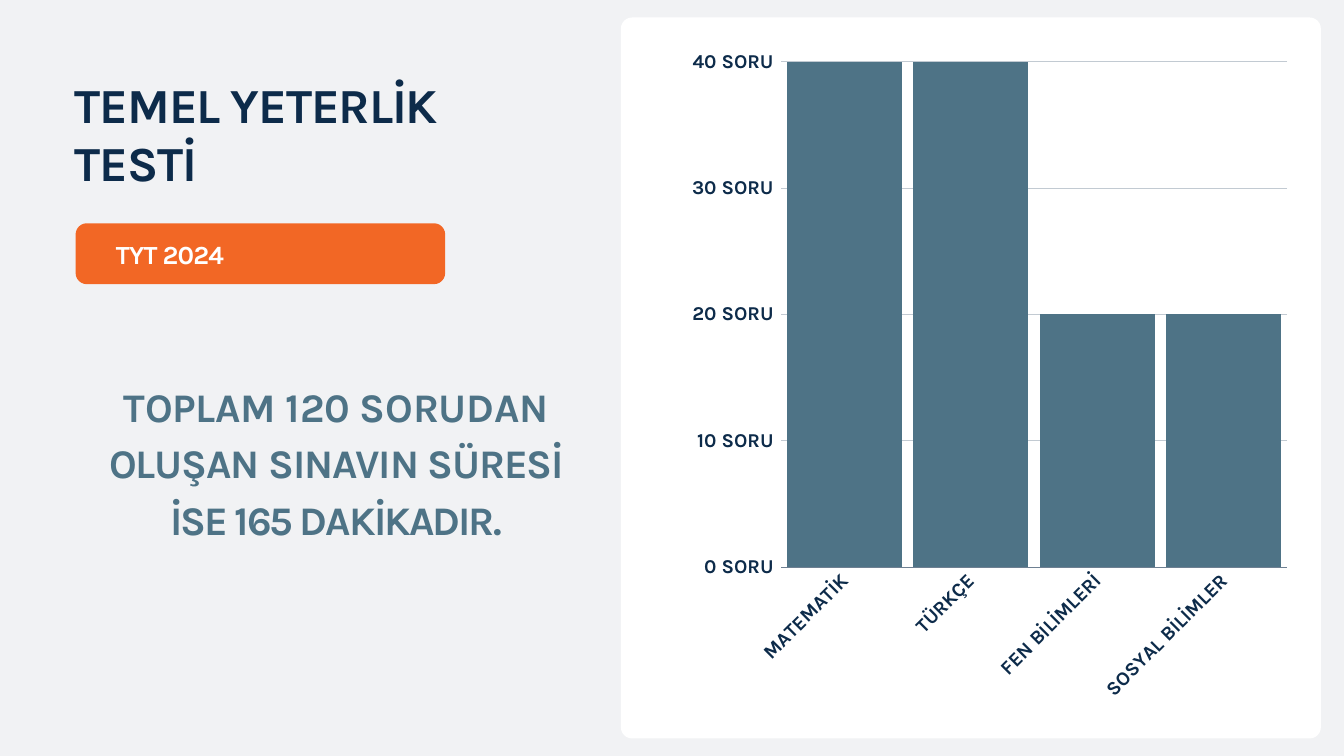
"""Build the TYT 2024 slide with its question-count chart."""
import pptx
import pptx.chart.data
import pptx.dml.color
import pptx.enum.chart
import pptx.enum.shapes
import pptx.enum.text
import pptx.oxml
import pptx.oxml.ns
import pptx.util

PX = 9525
FONT = "Karla"
COLORS = {
    "background": "F1F2F4",
    "panel": "FFFFFF",
    "navy": "0D2B4A",
    "orange": "F26725",
    "teal": "4E7386",
    "grid": "C2CAD2",
    "axis": "6E8092",
}
SUBJECTS = {"MATEMATİK": 40, "TÜRKÇE": 40, "FEN BİLİMLERİ": 20, "SOSYAL BİLİMLER": 20}
CHART = (920, 50, 940, 990)
PLOT = (1116, 88, 723, 722)


def px(*lengths):
    return [pptx.util.Emu(n * PX) for n in lengths]


def rgb(name):
    return pptx.dml.color.RGBColor.from_string(COLORS[name])


def set_font(font, size, color):
    font.name, font.size, font.bold = FONT, pptx.util.Pt(size), True
    font.color.rgb = rgb(color)


def write(s, runs, size, color, align=pptx.enum.text.PP_ALIGN.LEFT, margin=0,
          anchor=pptx.enum.text.MSO_ANCHOR.TOP, line_spacing=1.0):
    """Fill a shape with one paragraph of (text, letter spacing in points) runs."""
    tf = s.text_frame
    tf.word_wrap = True
    tf.auto_size = pptx.enum.text.MSO_AUTO_SIZE.NONE
    tf.vertical_anchor = anchor
    tf.margin_left, tf.margin_top, tf.margin_right, tf.margin_bottom = px(margin, 1, 0, 0)
    p = tf.paragraphs[0]
    p.alignment, p.line_spacing = align, line_spacing
    p.space_before = pptx.util.Pt(1)
    set_font(p.font, size, color)
    for text, spacing in runs:
        r = p.add_run()
        r.text = text
        r.font._element.set("spc", str(round(spacing * 100)))


def add_rounded_box(slide, box, color, radius=16):
    s = slide.shapes.add_shape(pptx.enum.shapes.MSO_SHAPE.ROUNDED_RECTANGLE, *px(*box))
    s.adjustments[0] = radius / min(box[2:])
    s.shadow.inherit = False
    s.fill.solid()
    s.fill.fore_color.rgb = rgb(color)
    s.line.fill.background()
    return s


def set_plot_area(chart, frame, plot):
    """Pin the inner plot area to a place on the slide."""
    area = chart._chartSpace.chart.plotArea
    for old in area.findall(pptx.oxml.ns.qn("c:layout")):
        area.remove(old)
    places = {
        "x": (plot[0] - frame[0]) / frame[2],
        "y": (plot[1] - frame[1]) / frame[3],
        "w": plot[2] / frame[2],
        "h": plot[3] / frame[3],
    }
    modes = '<c:xMode val="edge"/><c:yMode val="edge"/>'
    values = "".join(f'<c:{key} val="{n:.4f}"/>' for key, n in places.items())
    area.insert(0, pptx.oxml.parse_xml(
        f'<c:layout {pptx.oxml.ns.nsdecls("c")}><c:manualLayout>'
        f'<c:layoutTarget val="inner"/>{modes}{values}</c:manualLayout></c:layout>'))


def style_line(line, color):
    line.color.rgb = rgb(color)
    line.width = pptx.util.Pt(0.75)


def add_question_chart(slide):
    data = pptx.chart.data.CategoryChartData()
    data.categories = list(SUBJECTS)
    data.add_series("SORU", list(SUBJECTS.values()))
    kind = pptx.enum.chart.XL_CHART_TYPE.COLUMN_CLUSTERED
    chart = slide.shapes.add_chart(kind, *px(*CHART), data).chart
    chart.has_legend = chart.has_title = False
    set_font(chart.font, 21, "navy")
    set_plot_area(chart, CHART, PLOT)

    plot = chart.plots[0]
    plot.gap_width = 10
    plot.vary_by_categories = False
    fill = plot.series[0].format.fill
    fill.solid()
    fill.fore_color.rgb = rgb("teal")

    for axis in (chart.category_axis, chart.value_axis):
        axis.major_tick_mark = pptx.enum.chart.XL_TICK_MARK.NONE
        set_font(axis.tick_labels.font, 21, "navy")

    subjects, counts = chart.category_axis, chart.value_axis
    style_line(subjects.format.line, "axis")
    body = subjects._element.find(pptx.oxml.ns.qn("c:txPr")).find(pptx.oxml.ns.qn("a:bodyPr"))
    body.set("rot", str(-45 * 60000))
    body.set("vert", "horz")

    counts.minimum_scale, counts.maximum_scale, counts.major_unit = 0, 40, 10
    counts.has_major_gridlines = True
    style_line(counts.major_gridlines.format.line, "grid")
    counts.format.line.fill.background()
    counts.tick_labels.number_format = '0" SORU "'
    counts.tick_labels.number_format_is_linked = False


def add_title(slide):
    s = slide.shapes.title
    s.left, s.top, s.width, s.height = px(107, 105, 584, 171)
    write(s, [("TEMEL YETERLİK TESTİ", -1.2)], 52.5, "navy")


def add_summary(slide):
    s = slide.shapes.add_textbox(*px(116, 533, 728, 246))
    runs = [("TOPLAM 120 SORUDAN ", -0.3), ("OLUŞAN SINAVIN SÜRESİ ", -1.2),
            ("İSE 165 DAKİKADIR.", -2.1)]
    write(s, runs, 43.5, "teal", pptx.enum.text.PP_ALIGN.CENTER, line_spacing=1.16)


def main():
    prs = pptx.Presentation()
    prs.slide_width, prs.slide_height = px(1920, 1080)
    slide = prs.slides.add_slide(prs.slide_layouts[5])
    slide.background.fill.solid()
    slide.background.fill.fore_color.rgb = rgb("background")

    add_title(slide)
    badge = add_rounded_box(slide, (108, 319, 528, 87), "orange")
    write(badge, [("TYT 2024", -0.8)], 28, "panel", margin=53,
          anchor=pptx.enum.text.MSO_ANCHOR.MIDDLE)
    add_rounded_box(slide, (887, 25, 1000, 1030), "panel")
    add_question_chart(slide)
    add_summary(slide)
    prs.save("out.pptx")


if __name__ == "__main__":
    main()
